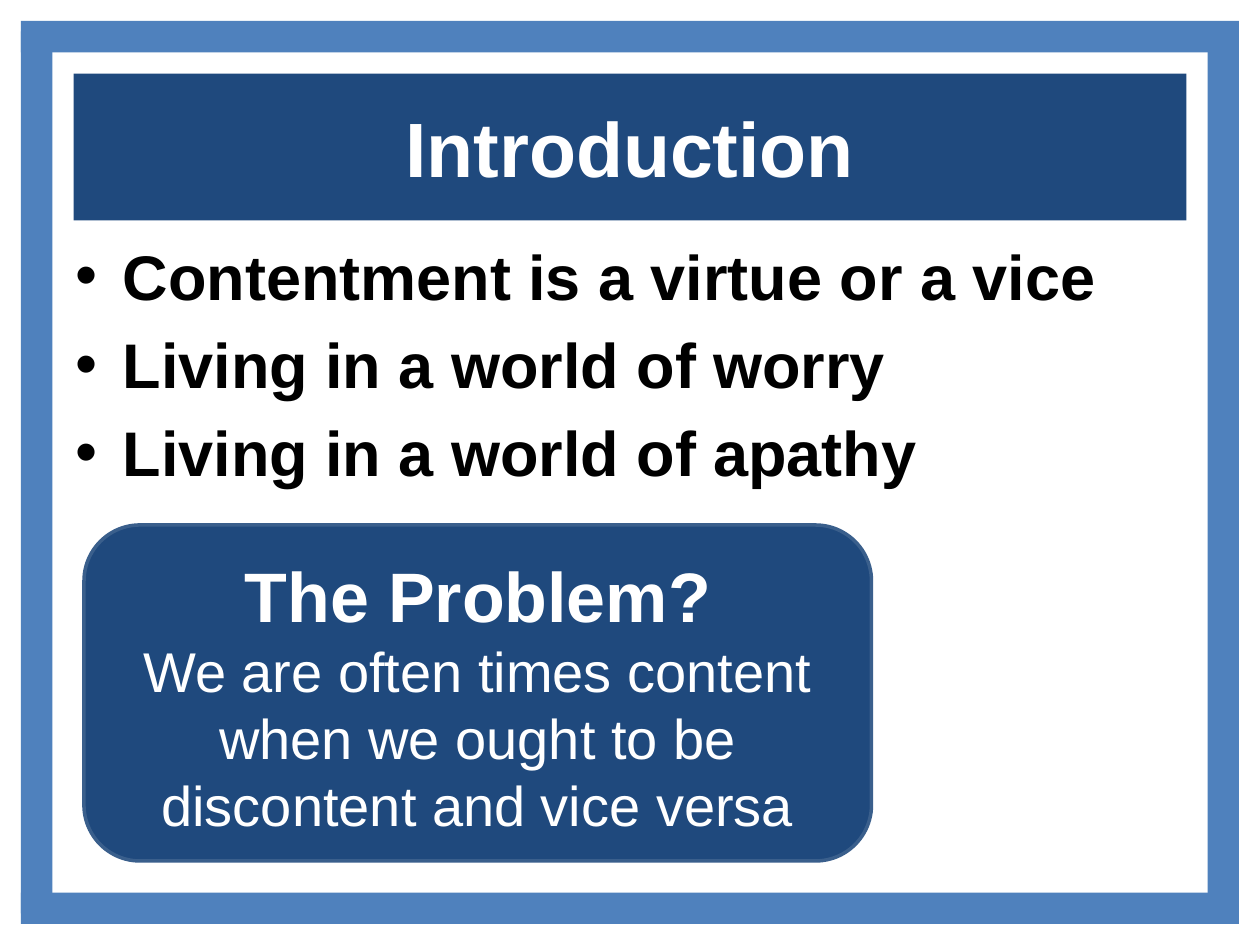
from pptx import Presentation
from pptx.dml.color import RGBColor
from pptx.enum.shapes import MSO_SHAPE
from pptx.enum.text import MSO_ANCHOR, MSO_AUTO_SIZE, PP_ALIGN
from pptx.util import Pt

PX = 7620  # EMU per px, 120 px to the inch
SLIDE_W, SLIDE_H = 1200, 900
MARGIN, BAR = 20, 30

NAVY = RGBColor(0x1F, 0x49, 0x7D)
BLUE = RGBColor(0x4F, 0x81, 0xBD)
OUTLINE = RGBColor(0x3A, 0x5F, 0x8C)
WHITE = RGBColor(0xFF, 0xFF, 0xFF)
BLACK = RGBColor(0x00, 0x00, 0x00)

RECT = MSO_SHAPE.RECTANGLE
ROUNDED = MSO_SHAPE.ROUNDED_RECTANGLE
CENTER = PP_ALIGN.CENTER
MIDDLE, TOP = MSO_ANCHOR.MIDDLE, MSO_ANCHOR.TOP
GROW = MSO_AUTO_SIZE.SHAPE_TO_FIT_TEXT
TITLE_AND_CONTENT = 1


class SlideBuilder:
    font = "Arial"

    def __init__(self, slide):
        self.slide = slide

    def place(self, shape, box):
        shape.left, shape.top, shape.width, shape.height = (v * PX for v in box)

    def add_lines(self, frame, lines, color, align=None):
        """Fill the frame with one paragraph per (text, size, bold) line."""
        frame.word_wrap = True
        for i, (text, size, bold) in enumerate(lines):
            paragraph = frame.add_paragraph() if i else frame.paragraphs[0]
            paragraph.alignment = align
            run = paragraph.add_run()
            run.text = text
            run.font.name = self.font
            run.font.size = Pt(size)
            run.font.bold = bold
            run.font.color.rgb = color

    def title(self, text, box):
        heading = self.slide.shapes.title
        self.place(heading, box)
        heading.fill.solid()
        heading.fill.fore_color.rgb = NAVY
        heading.text_frame.vertical_anchor = MIDDLE
        self.add_lines(heading.text_frame, [(text, 44, True)], WHITE, CENTER)

    def bullets(self, points, box):
        body = self.slide.placeholders[1]
        self.place(body, box)
        lines = [(point, 36, True) for point in points]
        self.add_lines(body.text_frame, lines, BLACK)

    def panel(self, kind, box, fill, outline=None):
        panel = self.slide.shapes.add_shape(kind, *(v * PX for v in box))
        panel.shadow.inherit = False
        panel.fill.solid()
        panel.fill.fore_color.rgb = fill
        if outline is None:
            panel.line.fill.background()
        else:
            panel.line.color.rgb = outline
            panel.line.width = Pt(2)

    def border(self):
        for top in (MARGIN, SLIDE_H - MARGIN - BAR):
            self.panel(RECT, (MARGIN, top, SLIDE_W - 2 * MARGIN, BAR), BLUE)
        for left in (MARGIN, SLIDE_W - MARGIN - BAR):
            self.panel(RECT, (left, BAR, BAR, SLIDE_H - 2 * BAR), BLUE)

    def text(self, lines, box):
        label = self.slide.shapes.add_textbox(*(v * PX for v in box))
        self.add_lines(label.text_frame, lines, WHITE, CENTER)
        label.text_frame.vertical_anchor = TOP
        label.text_frame.auto_size = GROW


def main():
    deck = Presentation()
    deck.slide_width, deck.slide_height = SLIDE_W * PX, SLIDE_H * PX
    layout = deck.slide_layouts[TITLE_AND_CONTENT]
    intro = SlideBuilder(deck.slides.add_slide(layout))

    intro.title("Introduction", (70, 70, 1060, 140))
    intro.bullets(
        [
            "Contentment is a virtue or a vice",
            "Living in a world of worry",
            "Living in a world of apathy",
        ],
        (60, 220, 1080, 620),
    )
    intro.border()
    intro.panel(ROUNDED, (80, 500, 750, 320), NAVY, OUTLINE)
    intro.text(
        [
            ("The Problem?", 40, True),
            ("We are often times content when we ought to be "
             "discontent and vice versa", 32, False),
        ],
        (100, 520, 710, 287),
    )
    deck.save("out.pptx")


if __name__ == "__main__":
    main()
